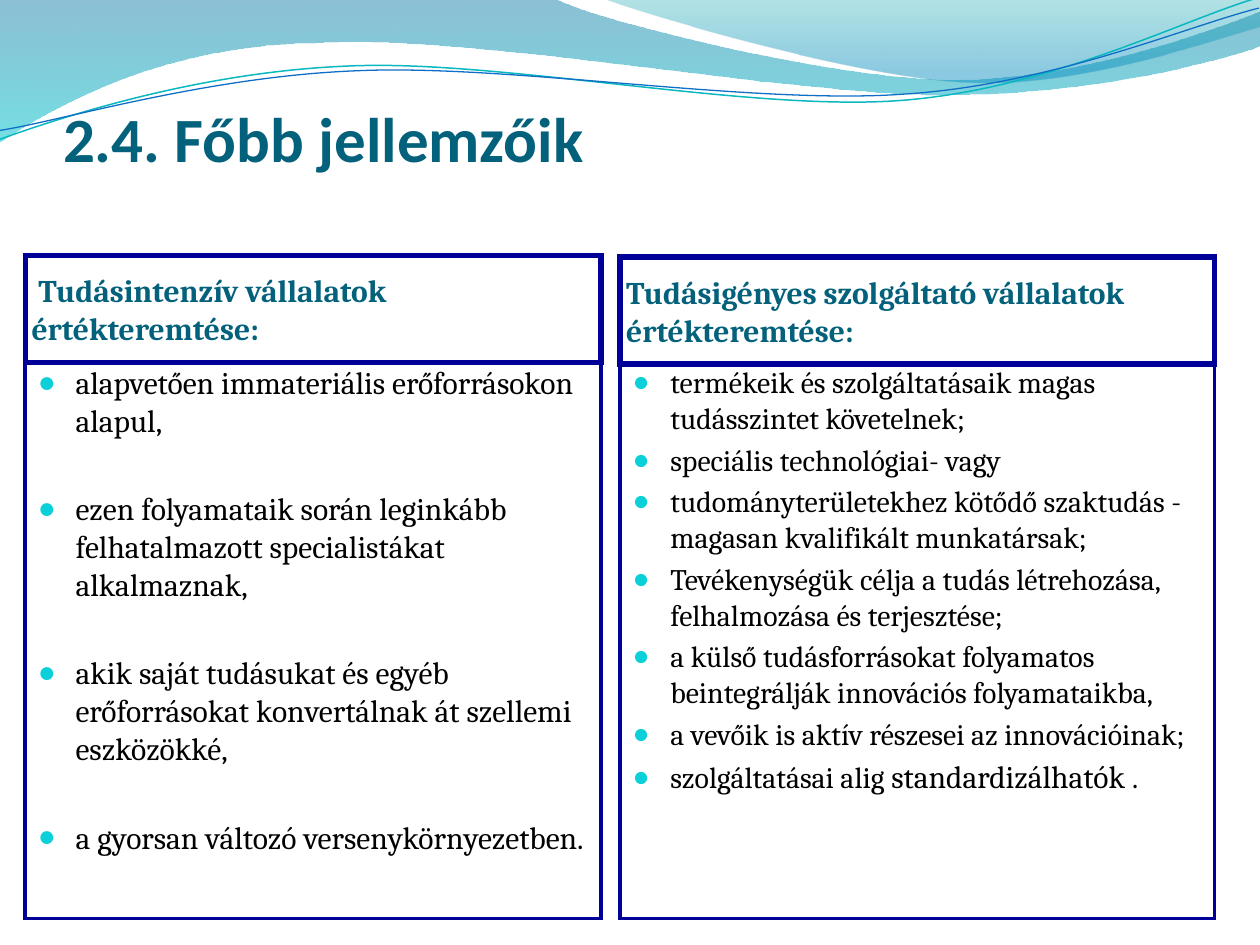
from lxml import etree
from pptx import Presentation
from pptx import util as u
from pptx.dml import color
from pptx.enum import text
from pptx.oxml import ns

TITLE_COLOR = "04617B"
FRAME_COLOR = "000099"
BULLET_COLOR = "0BD0D9"
LINE_ROTATION = 357.3

UPPER_WAVE = [
    [(0, -0.01)], [(4.4, -0.01)],
    [(4.76, 0.17), (6.64, 0.63), (7.58, 0.63)],
    [(8.53, 0.63), (9.58, 0.26), (10, 0.09)],
    [(10.01, 0.36)],
    [(9.83, 0.44), (8.7, 0.76), (7.46, 0.75)],
    [(6.22, 0.75), (3.82, 0.28), (2.57, 0.34)],
    [(1.29, 0.35), (0.46, 0.83), (-0.01, 1.13)],
]
RIGHT_WAVE = [
    [(4.79, -0.01)],
    [(5.09, 0.11), (6.82, 0.62), (7.69, 0.65)],
    [(8.56, 0.69), (9.61, 0.32), (10, 0.21)],
    [(10, 0)],
]
TEAL_LINE = [
    [(-0.02, 0.87)],
    [(0.47, 0.72), (1.58, 0.41), (2.77, 0.42)],
    [(3.96, 0.42), (5.91, 0.93), (7.12, 0.9)],
    [(8.32, 0.87), (9.41, 0.36), (10, 0.22)],
]
BLUE_LINE = [
    [(-0.02, 0.8)],
    [(0.46, 0.75), (1.64, 0.45), (2.83, 0.46)],
    [(4.03, 0.46), (5.96, 0.88), (7.16, 0.85)],
    [(8.35, 0.83), (9.42, 0.42), (10.01, 0.3)],
]

INTENSIVE_HEADING = " Tudásintenzív vállalatok értékteremtése:"
INTENSIVE_ITEMS = [
    [("alapvetően immateriális erőforrásokon alapul,", 18)],
    [("ezen folyamataik során leginkább felhatalmazott specialistákat alkalmaznak,", 18)],
    [("akik saját tudásukat és egyéb erőforrásokat konvertálnak át szellemi eszközökké,", 18)],
    [("a gyorsan változó versenykörnyezetben.", 18)],
]
SERVICE_HEADING = "Tudásigényes szolgáltató vállalatok értékteremtése:"
SERVICE_ITEMS = [
    [("termékeik és szolgáltatásaik magas tudásszintet követelnek;", 17)],
    [("speciális technológiai- vagy", 17)],
    [("tudományterületekhez kötődő szaktudás - magasan kvalifikált munkatársak;", 17)],
    [("Tevékenységük célja a tudás létrehozása, felhalmozása és terjesztése;", 17)],
    [("a külső tudásforrásokat folyamatos beintegrálják innovációs folyamataikba,", 17)],
    [("a vevőik is aktív részesei az innovációinak;", 17)],
    [("szolgáltatásai alig ", 17), ("standardizálhatók ", 18), (".", 17)],
]


def rgb(value):
    return color.RGBColor.from_string(value)


def add_element(parent, tag, **attributes):
    return etree.SubElement(parent, ns.qn(tag), attributes)


def add_wave(slide, segments, closed):
    points = [(u.Inches(x), u.Inches(y)) for segment in segments for x, y in segment]
    builder = slide.shapes.build_freeform(*points[0])
    builder.add_line_segments(points[1:], close=closed)
    wave = builder.convert_to_shape()
    wave.shadow.inherit = False
    bend_segments(wave, segments)
    return wave


def bend_segments(wave, segments):
    straight = iter(list(wave.element.spPr.iter(ns.qn("a:lnTo"))))
    for segment in segments[1:]:
        parts = [next(straight) for _ in segment]
        if len(parts) == 3:
            curve = etree.Element(ns.qn("a:cubicBezTo"))
            parts[0].addprevious(curve)
            for part in parts:
                curve.append(part[0])
                part.getparent().remove(part)


def add_filled_wave(slide, segments, stops):
    wave = add_wave(slide, segments, True)
    wave.line.fill.background()
    wave.fill.gradient()
    wave.fill.gradient_angle = 270
    for stop, (position, value, _) in zip(wave.fill.gradient_stops, stops):
        stop.position = position
        stop.color.rgb = rgb(value)
    colors = list(wave.element.spPr.iter(ns.qn("a:srgbClr")))
    for color_element, (_, _, opacity) in zip(colors, stops):
        add_element(color_element, "a:alpha", val=str(opacity * 1000))


def add_line_wave(slide, segments, value, width):
    wave = add_wave(slide, segments, False)
    wave.rotation = LINE_ROTATION
    wave.fill.background()
    wave.line.color.rgb = rgb(value)
    wave.line.width = u.Pt(width)


def add_waves(slide):
    add_filled_wave(slide, UPPER_WAVE, [(0, "0074A1", 45), (1, "00C6CF", 55)])
    add_filled_wave(slide, RIGHT_WAVE, [(0, "00A1A9", 30), (0.8, "008BBF", 45)])
    add_line_wave(slide, TEAL_LINE, "0AB8BF", 0.85)
    add_line_wave(slide, BLUE_LINE, "0F6FC6", 0.75)


def place(shape, box, anchor, margins):
    shape.left, shape.top, shape.width, shape.height = map(u.Inches, box)
    frame = shape.text_frame
    frame.word_wrap = True
    frame.auto_size = text.MSO_AUTO_SIZE.NONE
    frame.vertical_anchor = anchor
    frame.margin_left, frame.margin_top, frame.margin_right, frame.margin_bottom = map(
        u.Inches, margins)
    return frame


def set_heading_text(frame, wording, font_name, size):
    frame.text = wording
    paragraph = frame.paragraphs[0]
    paragraph.alignment = text.PP_ALIGN.LEFT
    paragraph.font.name = font_name
    paragraph.font.size = u.Pt(size)
    paragraph.font.bold = True
    paragraph.font.color.rgb = rgb(TITLE_COLOR)


def set_border(shape, width):
    shape.fill.background()
    shape.line.color.rgb = rgb(FRAME_COLOR)
    shape.line.width = u.Pt(width)
    add_element(shape.element.spPr.find(ns.qn("a:ln")), "a:miter", lim="800000")


def fill_title(shape, box):
    frame = place(shape, box, text.MSO_ANCHOR.BOTTOM, (0, 0.05, 0, 0))
    set_heading_text(frame, "2.4. Főbb jellemzőik", "Calibri", 36)


def set_bullet(paragraph):
    properties = paragraph._p.get_or_add_pPr()
    properties.set("marL", str(u.Inches(0.3)))
    properties.set("indent", str(u.Inches(-0.3)))
    bullet_color = add_element(properties, "a:buClr")
    add_element(bullet_color, "a:srgbClr", val=BULLET_COLOR)
    add_element(properties, "a:buSzPct", val="95000")
    add_element(properties, "a:buChar", char="●")


def fill_column(heading, body, box, wording, items, gap=None):
    left, top, width, height = box
    heading_height = 0.85
    frame = place(heading, (left, top, width, heading_height),
                  text.MSO_ANCHOR.MIDDLE, (0.05, 0, 0.05, 0))
    set_heading_text(frame, wording, "Cambria", 18)
    set_border(heading, 3)

    frame = place(body, (left, top + heading_height, width, height - heading_height),
                  text.MSO_ANCHOR.TOP, (0.1, 0, 0.1, 0.05))
    set_border(body, 2)
    for index, parts in enumerate(items):
        paragraph = frame.add_paragraph() if index else frame.paragraphs[0]
        if index and gap:
            paragraph.space_before = u.Pt(gap)
        set_bullet(paragraph)
        paragraph.font.name = "Cambria"
        paragraph.font.color.rgb = rgb("000000")
        for part, size in parts:
            run = paragraph.add_run()
            run.text = part
            run.font.name = "Cambria"
            run.font.size = u.Pt(size)
            run.font.color.rgb = rgb("000000")


def main():
    presentation = Presentation()
    presentation.slide_width, presentation.slide_height = u.Inches(10), u.Inches(7.5)
    slide = presentation.slides.add_slide(presentation.slide_layouts.get_by_name("Comparison"))
    placeholders = list(slide.placeholders)
    add_waves(slide)
    for placeholder in placeholders:
        placeholder.element.getparent().append(placeholder.element)
    title, left_heading, left_body, right_heading, right_body = placeholders
    fill_title(title, (0.5, 0.21, 9, 1.18))
    fill_column(left_heading, left_body, (0.2, 2.03, 4.57, 5.26),
                INTENSIVE_HEADING, INTENSIVE_ITEMS, gap=29)
    fill_column(right_heading, right_body, (4.92, 2.04, 4.72, 5.25),
                SERVICE_HEADING, SERVICE_ITEMS)
    presentation.save("out.pptx")


if __name__ == "__main__":
    main()
